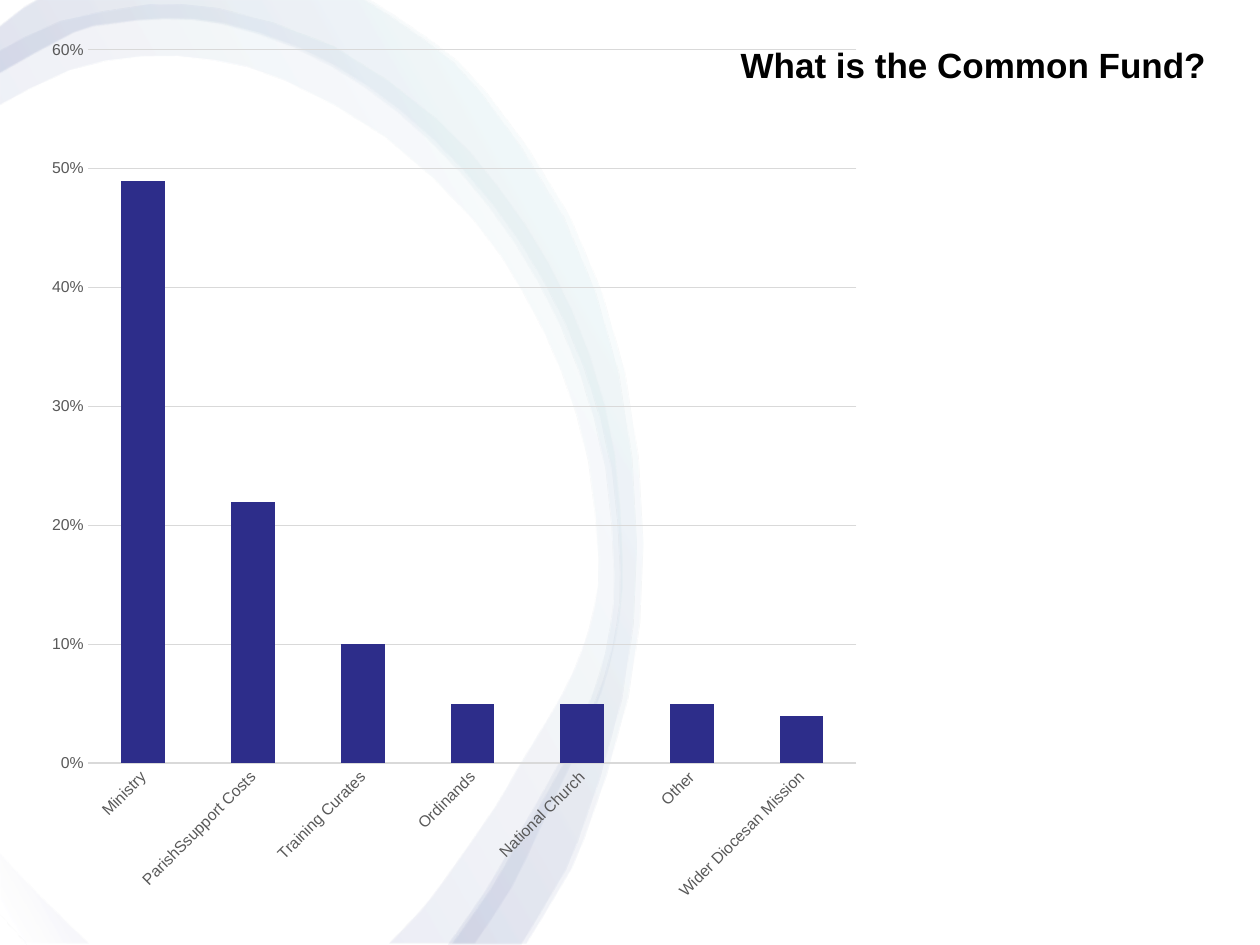
import lxml.etree
import pptx
import pptx.chart.data
import pptx.dml.color
import pptx.enum.chart
import pptx.enum.shapes
import pptx.enum.text
import pptx.oxml.ns
import pptx.util

Inches = pptx.util.Inches
Pt = pptx.util.Pt
qn = pptx.oxml.ns.qn

NAVY = "2D2D8A"
GRADIENT_STOPS = [(2, "FFFFFF"), (16, NAVY), (85, "BBE0E3"), (100, "FFFFFF")]
OPACITY = 10

NARROW_CORNER = [(0, 6.77), (0, 7.49), (0.71, 7.49), (0.33, 7.12), (0.09, 6.87)]
NARROW_INNER = [
    (0, 0.84), (0.56, 0.56), (1.13, 0.45), (1.7, 0.48), (2.26, 0.64), (3.06, 1.09),
    (3.76, 1.75), (4.15, 2.32), (4.46, 2.96), (4.67, 3.67), (4.75, 4.44), (4.72, 4.81),
    (4.62, 5.16), (4.48, 5.48), (4.3, 5.79), (4.11, 6.1), (3.93, 6.41), (3.54, 6.97),
    (3.34, 7.23), (3.09, 7.49),
]
NARROW_OUTER = [
    (0, 0.41), (0.49, 0.17), (1.11, 0.05), (1.27, 0.04), (1.74, 0.07), (2.65, 0.37),
    (3.47, 0.95), (3.95, 1.48), (4.36, 2.1), (4.68, 2.82), (4.88, 3.61), (4.94, 4.44),
    (4.92, 4.86), (4.84, 5.28), (4.71, 5.67), (4.55, 6.03), (4.31, 6.53), (4.06, 7.05),
    (3.77, 7.49),
]
WIDE_CORNER = [(0, 7.27), (0, 7.5), (0.21, 7.5), (0.11, 7.39)]
WIDE_INNER = [
    (0, 0.59), (0.58, 0.27), (0.87, 0.2), (1.3, 0.16), (1.76, 0.2), (2.34, 0.39),
    (2.89, 0.7), (3.4, 1.12), (3.87, 1.64), (4.27, 2.25), (4.59, 2.95), (4.8, 3.73),
    (4.87, 4.56), (4.84, 4.97), (4.75, 5.36), (4.61, 5.72), (4.43, 6.06), (4.24, 6.4),
    (4.04, 6.74), (3.85, 7.07), (3.55, 7.5),
]
WIDE_TOP_LEFT = [(0, 0.22), (0.19, 0.07), (0.31, 0)]
WIDE_OUTER = [
    (2.88, 0), (3.4, 0.35), (3.81, 0.74), (4.47, 1.73), (4.9, 2.95), (5.05, 4.33),
    (4.93, 5.55), (4.58, 6.68), (4.4, 7.05), (4.13, 7.5),
]


def color(value):
    """Return the colour for a hex string."""
    return pptx.dml.color.RGBColor.from_string(value)


def style_font(font, size, value, bold=False):
    """Set typeface, size, colour and weight of a font."""
    font.name = "Arial"
    font.size = Pt(size)
    font.bold = bold
    font.color.rgb = color(value)


def smooth_curve(points):
    """Return the points with a rounded midpoint between each pair."""
    padded = [points[0], *points, points[-1]]
    curve = [points[0]]
    for before, start, end, after in zip(padded, padded[1:], padded[2:], padded[3:]):
        middle = tuple(
            (9 * (b + c) - a - d) / 16 for a, b, c, d in zip(before, start, end, after))
        curve += [middle, end]
    return curve


def fill_with_gradient(shape):
    """Fill a shape with the pale translucent gradient."""
    shape.fill.gradient()
    shape.fill.gradient_angle = 30
    stops = shape.element.spPr.find(qn("a:gradFill")).find(qn("a:gsLst"))
    for stop in list(stops):
        stops.remove(stop)
    for position, value in GRADIENT_STOPS:
        stop = lxml.etree.SubElement(stops, qn("a:gs"), pos=str(position * 1000))
        stop_color = lxml.etree.SubElement(stop, qn("a:srgbClr"), val=value)
        lxml.etree.SubElement(stop_color, qn("a:alpha"), val=str(OPACITY * 1000))


def add_band(shapes, left, top, stretch, contours):
    """Draw one swirl band from closed contours at the given corner."""
    placed = [
        [(left + Inches(x * stretch), top + Inches(y)) for x, y in contour]
        for contour in contours
    ]
    builder = shapes.build_freeform(*placed[0][0])
    builder.add_line_segments(placed[0][1:], close=True)
    for contour in placed[1:]:
        builder.move_to(*contour[0])
        builder.add_line_segments(contour[1:], close=True)
    band = builder.convert_to_shape()
    fill_with_gradient(band)
    band.line.fill.background()
    band.shadow.inherit = False


def add_swirl(slide, left, top):
    """Draw the three overlapping bands of the swirl."""
    shapes = slide.shapes.add_group_shape().shapes
    narrow = smooth_curve(NARROW_INNER) + smooth_curve(NARROW_OUTER)[::-1]
    wide_edge = WIDE_TOP_LEFT + smooth_curve(WIDE_OUTER)
    wide = smooth_curve(WIDE_INNER) + wide_edge[::-1]
    add_band(shapes, left, top, 1, [NARROW_CORNER, narrow])
    add_band(shapes, left, top, 1, [WIDE_CORNER, wide])
    add_band(shapes, left, top - Inches(0.01), 5.12 / 5.06, [WIDE_CORNER, wide])


def add_backdrop(slide, left, top, width, height):
    """Lay a plain white rectangle over the box."""
    shape = slide.shapes.add_shape(
        pptx.enum.shapes.MSO_SHAPE.RECTANGLE, left, top, width, height)
    shape.fill.solid()
    shape.fill.fore_color.rgb = color("FFFFFF")
    shape.line.fill.background()
    shape.shadow.inherit = False


def add_title(slide, left, top, width, height):
    """Write the slide title in the box."""
    frame = slide.shapes.add_textbox(left, top, width, height).text_frame
    frame.word_wrap = True
    frame.vertical_anchor = pptx.enum.text.MSO_ANCHOR.TOP
    paragraph = frame.paragraphs[0]
    paragraph.line_spacing = 0.9
    run = paragraph.add_run()
    run.text = "What is the Common Fund?"
    style_font(run.font, 20, "000000", bold=True)


def add_fund_chart(slide, left, top, width, height):
    """Chart the shares of the fund as columns in the box."""
    shares = {
        "Ministry": 0.49, "ParishSsupport Costs": 0.22, "Training Curates": 0.1,
        "Ordinands": 0.05, "National Church": 0.05, "Other": 0.05,
        "Wider Diocesan Mission": 0.04,
    }
    data = pptx.chart.data.CategoryChartData(number_format="0%")
    data.categories = list(shares)
    data.add_series("Series 1", list(shares.values()))
    chart = slide.shapes.add_chart(
        pptx.enum.chart.XL_CHART_TYPE.COLUMN_CLUSTERED, left, top, width, height, data).chart
    chart.has_legend = False
    chart.has_title = False
    style_font(chart.font, 10, "000000")
    plot = chart.plots[0]
    plot.gap_width = 150
    plot.vary_by_categories = False
    fill = plot.series[0].format.fill
    fill.solid()
    fill.fore_color.rgb = color(NAVY)

    category_axis, value_axis = chart.category_axis, chart.value_axis
    for axis in (category_axis, value_axis):
        axis.major_tick_mark = pptx.enum.chart.XL_TICK_MARK.NONE
        axis.minor_tick_mark = pptx.enum.chart.XL_TICK_MARK.NONE
        style_font(axis.tick_labels.font, 9, "595959")
    value_axis.minimum_scale, value_axis.maximum_scale = 0, 0.6
    value_axis.major_unit = 0.1
    value_axis.tick_labels.number_format = "0%"
    value_axis.tick_labels.number_format_is_linked = False
    value_axis.format.line.fill.background()
    for line in (category_axis.format.line, value_axis.major_gridlines.format.line):
        line.color.rgb = color("D9D9D9")
        line.width = Pt(0.75)
    label_body = chart.element.xpath(".//c:catAx/c:txPr/a:bodyPr")[0]
    label_body.set("rot", "-2700000")
    label_body.set("vert", "horz")


def main():
    """Build the slide and save it."""
    presentation = pptx.Presentation()
    presentation.slide_width = Inches(10)
    presentation.slide_height = Inches(7.5)
    slide = presentation.slides.add_slide(presentation.slide_layouts[6])
    add_backdrop(slide, 0, 0, presentation.slide_width, presentation.slide_height)
    add_title(slide, Inches(5.78), Inches(0.33), Inches(3.94), Inches(0.85))
    add_swirl(slide, 0, 0)
    add_fund_chart(slide, Inches(0.28), Inches(0.18), Inches(6.65), Inches(7.11))
    presentation.save("out.pptx")


if __name__ == "__main__":
    main()
